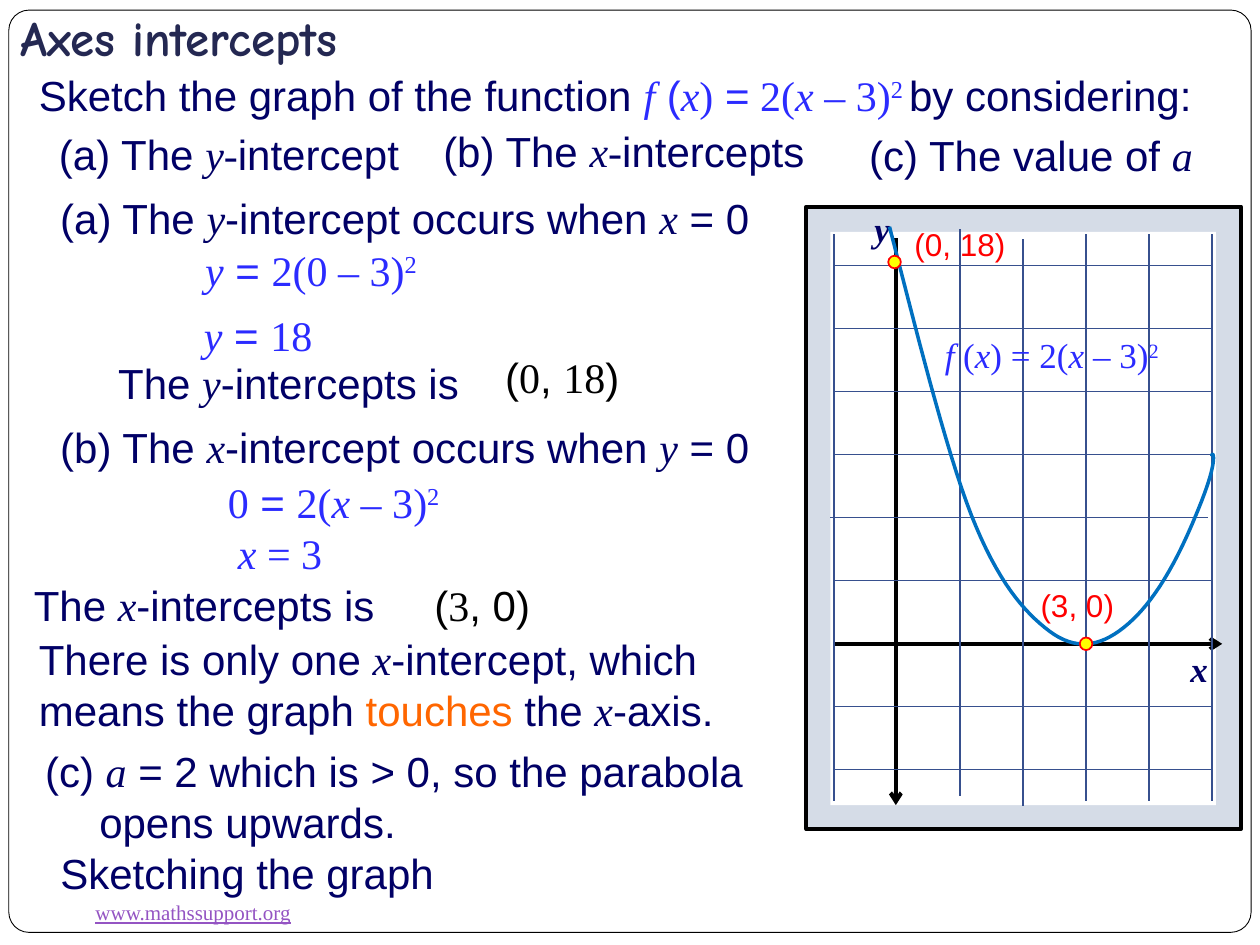
from lxml.etree import SubElement
from pptx import Presentation
from pptx.dml.color import RGBColor
from pptx.enum.shapes import MSO_CONNECTOR as CONNECTOR, MSO_SHAPE as SHAPE
from pptx.enum.text import MSO_ANCHOR as ANCHOR, MSO_AUTO_SIZE as AUTO_SIZE, PP_ALIGN as ALIGN
from pptx.oxml.ns import qn
from pptx.util import Inches, Pt

NAVY = RGBColor(0x01, 0x00, 0x66)
BLUE = RGBColor(0x2B, 0x2B, 0xFF)
BLACK = RGBColor(0, 0, 0)
WHITE = RGBColor(255, 255, 255)
RED = RGBColor(255, 0, 0)
YELLOW = RGBColor(255, 255, 0)
ORANGE = RGBColor(0xFF, 0x66, 0)
TITLE_COLOR = RGBColor(0x24, 0x28, 0x52)
LINK_COLOR = RGBColor(0x94, 0x54, 0xC3)
PANEL = RGBColor(0xD5, 0xDC, 0xE7)
GRID = RGBColor(0x37, 0x50, 0x8E)
CURVE = RGBColor(0, 0x70, 0xC0)

SANS, SERIF = "Arial", "Times New Roman"
PLAIN = {"name": SANS}
ROMAN = {"name": SERIF}
ITALIC = {"name": SERIF, "italic": True}
RAISED = {"name": SERIF, "raised": True}
BOLD_ITALIC = {"name": SERIF, "italic": True, "bold": True}
ACCENT = {"name": SANS, "color": ORANGE}
LINK = {"name": SERIF, "underline": True}
HEADING = {"name": "Comic Neue", "bold": True}

X, Y = ("x", ITALIC), ("y", ITALIC)
EQUALS = (" = ", PLAIN)
SQUARED_BRACKET = [("x ", ITALIC), ("– 3)", ROMAN), ("2", RAISED)]

TEXTS = [
    ((0.21, 0.5, 9.73, 0.5), [
        ("Sketch the graph of the function ", PLAIN), ("f", {**ITALIC, "color": BLUE}),
        (" (", {**PLAIN, "color": BLUE}), ("x", {**ITALIC, "color": BLUE}),
        (")", {**ROMAN, "color": BLUE}), (" =", {**PLAIN, "color": BLUE}),
        (" 2(", {**ROMAN, "color": BLUE}), ("x ", {**ITALIC, "color": BLUE}),
        ("– 3)", {**ROMAN, "color": BLUE}), ("2 ", {**RAISED, "color": BLUE}),
        ("by considering:", PLAIN)], {}),
    ((0.37, 0.97, 3.16, 0.5), [("(a) The ", PLAIN), ("y-", ITALIC), ("intercept", PLAIN)], {}),
    ((3.42, 0.95, 3.16, 0.5), [("(b) The ", PLAIN), ("x-", ITALIC), ("intercepts", PLAIN)], {}),
    ((6.8, 0.98, 3.15, 0.5), [("(c) The value of ", PLAIN), ("a", ITALIC)], {}),
    ((0.38, 1.48, 5.76, 0.5),
     [("(a) The ", PLAIN), Y, ("-intercept occurs when ", PLAIN), X, (" = 0", PLAIN)], {}),
    ((1.53, 1.89, 1.98, 0.5), [Y, EQUALS, ("2(0 – 3)", ROMAN), ("2", RAISED)],
     {"color": BLUE, "wrap": False}),
    ((1.52, 2.41, 1.07, 0.5), [Y, EQUALS, ("18", ROMAN)], {"color": BLUE, "wrap": False}),
    ((0.84, 2.79, 3.24, 0.5), [("The ", PLAIN), Y, ("-intercepts is", PLAIN)], {}),
    ((3.91, 2.74, 1.12, 0.5),
     [("(", PLAIN), ("0", ROMAN), (", ", PLAIN), ("18", ROMAN), (")", PLAIN)],
     {"color": BLACK, "wrap": False}),
    ((0.38, 3.3, 5.73, 0.5),
     [("(b) The ", PLAIN), X, ("-intercept occurs when ", PLAIN), Y, (" = 0", PLAIN)], {}),
    ((1.71, 3.73, 2, 0.5), [("0", ROMAN), EQUALS, ("2(", ROMAN), *SQUARED_BRACKET],
     {"color": BLUE, "wrap": False}),
    ((1.79, 4.14, 0.88, 0.5), [("x ", ITALIC), ("= 3", ROMAN)], {"color": BLUE, "wrap": False}),
    ((0.17, 4.55, 3.24, 0.5), [("The ", PLAIN), X, ("-intercepts is", PLAIN)], {}),
    ((3.35, 4.55, 0.97, 0.5), [("(", PLAIN), ("3", ROMAN), (", 0)", PLAIN)],
     {"color": BLACK, "wrap": False}),
    ((0.21, 4.98, 6.02, 0.91), [
        ("There is only one ", PLAIN), X, ("-intercept, which means the graph ", PLAIN),
        ("touches", ACCENT), (" the ", PLAIN), X, ("-axis.", PLAIN)], {}),
    ((0.26, 5.87, 6, 0.91), [
        ("(c) ", PLAIN), ("a", ITALIC),
        (" = 2 which is > 0, so the parabola opens upwards.", PLAIN)], {"hanging": 0.43}),
    ((0.38, 6.68, 5.15, 0.5), [("Sketching the graph", PLAIN)], {}),
    ((0.66, 7.09, 1.77, 0.3), [("www.mathssupport.org", LINK)],
     {"size": 12, "color": LINK_COLOR, "wrap": False}),
]
AXIS_LABELS = [
    ((9.35, 5.09, 0.34, 0.43), [("x", BOLD_ITALIC)], {"size": 20, "wrap": False}),
    ((6.84, 1.6, 0.32, 0.43), [("y", BOLD_ITALIC)], {"size": 20, "wrap": False}),
]
CURVE_LABELS = [
    ((8.16, 4.6, 0.79, 0.4), [("(3, 0)", PLAIN)], {"size": 18, "color": RED, "wrap": False}),
    ((7.16, 1.74, 0.97, 0.4), [("(0, 18)", PLAIN)], {"size": 18, "color": RED}),
    ((7.4, 2.6, 2.26, 0.44),
     [("f", ITALIC), (" (", ROMAN), X, (") = 2(", ROMAN), *SQUARED_BRACKET],
     {"size": 20, "color": BLUE}),
]

GRID_STEP = 0.5
GRID_LEFT, GRID_TOP = 6.62, 2.11
VERTICAL_TOPS = {0: 1.86, 2: 1.82, 3: 1.9, 4: 1.86, 5: 1.86, 6: 1.86}
HORIZONTAL_LEFTS = {0: 6.63, 1: 6.62, 2: 6.62, 3: 6.62, 4: 6.59, 5: 6.63, 7: 6.63, 8: 6.61}
AXES = [((6.62, 5.11), (9.7, 5.11)), ((7.11, 1.89), (7.11, 6.39))]
INTERCEPTS = [(7.05, 2.03), (8.57, 5.06)]
CURVE_START = (7.06, 1.8)
CURVE_PIECES = [
    ((7.26, 2.57), (7.5, 3.55), (7.71, 4.09)),
    ((7.92, 4.62), (8.13, 4.86), (8.33, 5.01)),
    ((8.53, 5.16), (8.72, 5.14), (8.92, 4.98)),
    ((9.11, 4.83), (9.3, 4.56), (9.5, 4.07)),
    ((9.7, 3.59), (9.61, 3.58), (9.62, 3.62)),
]
PIECE_STEPS = 16


def write_text(frame, runs, size=24, color=NAVY, wrap=True, hanging=0):
    frame.word_wrap = wrap
    paragraph = frame.paragraphs[0]
    paragraph.alignment = ALIGN.LEFT
    if hanging:
        properties = paragraph._p.get_or_add_pPr()
        properties.set("marL", str(Inches(hanging)))
        properties.set("indent", str(-Inches(hanging)))
    for text, style in runs:
        run = paragraph.add_run()
        run.text = text
        font = run.font
        font.name = style["name"]
        font.size = Pt(size)
        font.bold = style.get("bold", False)
        font.italic = style.get("italic", False)
        font.underline = style.get("underline", False)
        font.color.rgb = style.get("color", color)
        if style.get("raised"):
            run._r.get_or_add_rPr().set("baseline", "30000")


def add_texts(shapes, entries):
    for box, runs, options in entries:
        frame = shapes.add_textbox(*map(Inches, box)).text_frame
        frame.auto_size = AUTO_SIZE.SHAPE_TO_FIT_TEXT
        write_text(frame, runs, **options)


def add_figure(shapes, kind, box, fill, line=None, width=1):
    shape = shapes.add_shape(kind, *map(Inches, box))
    shape.shadow.inherit = False
    shape.fill.solid()
    shape.fill.fore_color.rgb = fill
    if line is None:
        shape.line.fill.background()
    else:
        shape.line.color.rgb = line
        shape.line.width = Pt(width)
    return shape


def add_line(shapes, start, end, color=GRID, width=0.75, arrow=False):
    connector = shapes.add_connector(CONNECTOR.STRAIGHT, *map(Inches, (*start, *end)))
    connector.line.color.rgb = color
    connector.line.width = Pt(width)
    if arrow:
        SubElement(connector.line._get_or_add_ln(), qn("a:tailEnd"), type="arrow")
    SubElement(connector._element.spPr, qn("a:effectLst"))


def curve_points():
    start = CURVE_START
    for first, second, end in CURVE_PIECES:
        for step in range(1, PIECE_STEPS + 1):
            t = step / PIECE_STEPS
            weights = ((1 - t) ** 3, 3 * t * (1 - t) ** 2, 3 * t * t * (1 - t), t ** 3)
            yield tuple(
                Inches(sum(w * v for w, v in zip(weights, values)))
                for values in zip(start, first, second, end))
        start = end


def add_graph(shapes):
    add_figure(shapes, SHAPE.RECTANGLE, (6.4, 1.64, 3.45, 4.94), PANEL, BLACK, 2.25)
    add_figure(shapes, SHAPE.RECTANGLE, (6.59, 1.84, 3.06, 4.55), WHITE)
    for start, end in AXES:
        add_line(shapes, start, end, BLACK, 2.25, arrow=True)
    for column, top in VERTICAL_TOPS.items():
        x = GRID_LEFT + column * GRID_STEP
        add_line(shapes, (x, top), (x, top + 4.5))
    for row, left in HORIZONTAL_LEFTS.items():
        y = GRID_TOP + row * GRID_STEP
        add_line(shapes, (left, y), (left + 3, y))
    add_texts(shapes, AXIS_LABELS)
    builder = shapes.build_freeform(*map(Inches, CURVE_START))
    builder.add_line_segments(list(curve_points()), close=False)
    parabola = builder.convert_to_shape()
    parabola.shadow.inherit = False
    parabola.fill.background()
    parabola.line.color.rgb = CURVE
    parabola.line.width = Pt(2)
    for left, top in INTERCEPTS:
        add_figure(shapes, SHAPE.OVAL, (left, top, 0.1, 0.1), YELLOW, RED)
    add_texts(shapes, CURVE_LABELS)


def main():
    presentation = Presentation()
    presentation.slide_width, presentation.slide_height = Inches(10), Inches(7.5)
    slide = presentation.slides.add_slide(presentation.slide_layouts[5])
    shapes = slide.shapes
    title = shapes.title
    border = add_figure(shapes, SHAPE.ROUNDED_RECTANGLE, (0.07, 0.08, 9.86, 7.32), WHITE, BLACK, 0.5)
    border.adjustments[0] = 0.022
    title._element.addprevious(border._element)
    title.left, title.top, title.width, title.height = map(Inches, (0.06, 0.12, 9, 0.51))
    frame = title.text_frame
    frame.auto_size = AUTO_SIZE.NONE
    frame.vertical_anchor = ANCHOR.BOTTOM
    frame.margin_bottom = Inches(0.1)
    write_text(frame, [("Axes intercepts", HEADING)], size=28, color=TITLE_COLOR)
    add_graph(shapes)
    add_texts(shapes, TEXTS)
    presentation.save("out.pptx")


if __name__ == "__main__":
    main()
